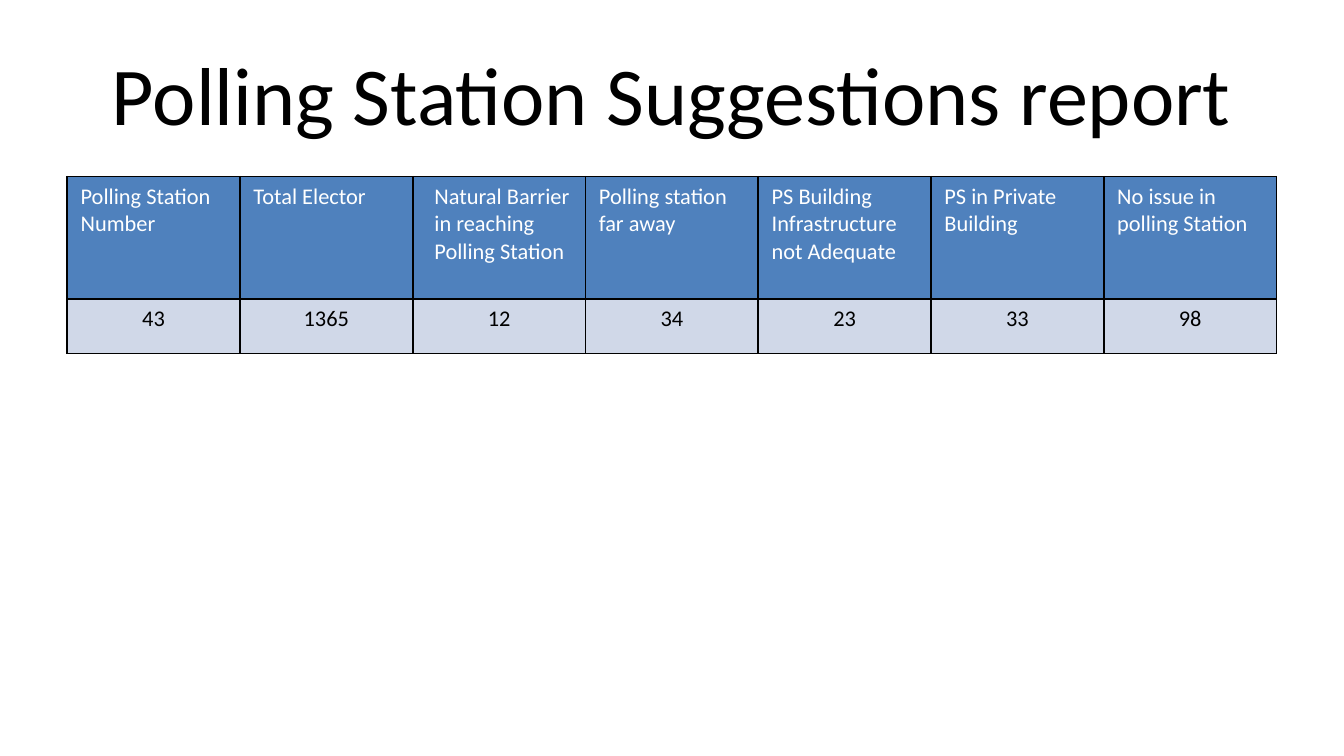
"""Build the polling station suggestions report slide."""
from dataclasses import dataclass

from lxml import etree
from pptx import Presentation
from pptx import util as u
from pptx.dml.color import RGBColor
from pptx.enum import text
from pptx.oxml import ns


@dataclass(frozen=True)
class Theme:
    font: str = "Calibri"
    title_size: int = 44
    table_size: int = 12
    ink: str = "000000"
    header_ink: str = "FFFFFF"
    header_fill: str = "4F81BD"
    value_fill: str = "D0D8E8"
    border: str = "000000"


theme = Theme()


def format_text(paragraph, size, color, alignment):
    paragraph.alignment = alignment
    for run in paragraph.runs:
        run.font.name = theme.font
        run.font.size = u.Pt(size)
        run.font.color.rgb = RGBColor.from_string(color)


def add_borders(cell):
    properties = cell._tc.get_or_add_tcPr()
    for side in ("lnL", "lnR", "lnT", "lnB"):
        line = etree.SubElement(properties, ns.qn(f"a:{side}"), w=str(u.Pt(1)))
        fill = etree.SubElement(line, ns.qn("a:solidFill"))
        etree.SubElement(fill, ns.qn("a:srgbClr"), val=theme.border)


presentation = Presentation()
presentation.slide_width = u.Cm(25.4)
presentation.slide_height = u.Cm(14.29)
slide = presentation.slides.add_slide(presentation.slide_layouts[6])

left, width = u.Cm(1.27), u.Cm(22.86)

title = slide.shapes.add_textbox(left, u.Cm(0.57), width, u.Cm(2.38))
title.text_frame.word_wrap = True
title.text_frame.vertical_anchor = text.MSO_ANCHOR.MIDDLE
title.text_frame.text = "Polling Station Suggestions report"
format_text(title.text_frame.paragraphs[0], theme.title_size, theme.ink, text.PP_ALIGN.CENTER)

columns = [
    ("Polling Station Number", "43"),
    ("Total Elector", "1365"),
    ("Natural Barrier in reaching Polling Station", "12"),
    ("Polling station far away", "34"),
    ("PS Building Infrastructure not Adequate", "23"),
    ("PS in Private Building", "33"),
    ("No issue in polling Station", "98"),
]
row_styles = [
    (u.Cm(2.31), theme.header_fill, theme.header_ink, text.PP_ALIGN.LEFT),
    (u.Cm(1.03), theme.value_fill, theme.ink, text.PP_ALIGN.CENTER),
]

table_height = sum(style[0] for style in row_styles)
table = slide.shapes.add_table(
    len(row_styles), len(columns), left, u.Cm(3.34), width, table_height
).table

for row, (height, fill, ink, alignment) in enumerate(row_styles):
    table.rows[row].height = height
    for column, entries in enumerate(columns):
        cell = table.cell(row, column)
        add_borders(cell)
        cell.fill.solid()
        cell.fill.fore_color.rgb = RGBColor.from_string(fill)
        cell.text_frame.text = entries[row]
        paragraph = cell.text_frame.paragraphs[0]
        format_text(paragraph, theme.table_size, ink, alignment)
        for run in paragraph.runs:
            run.font.bold = False

table.cell(0, 2).margin_left = u.Cm(0.41)

presentation.save("out.pptx")
